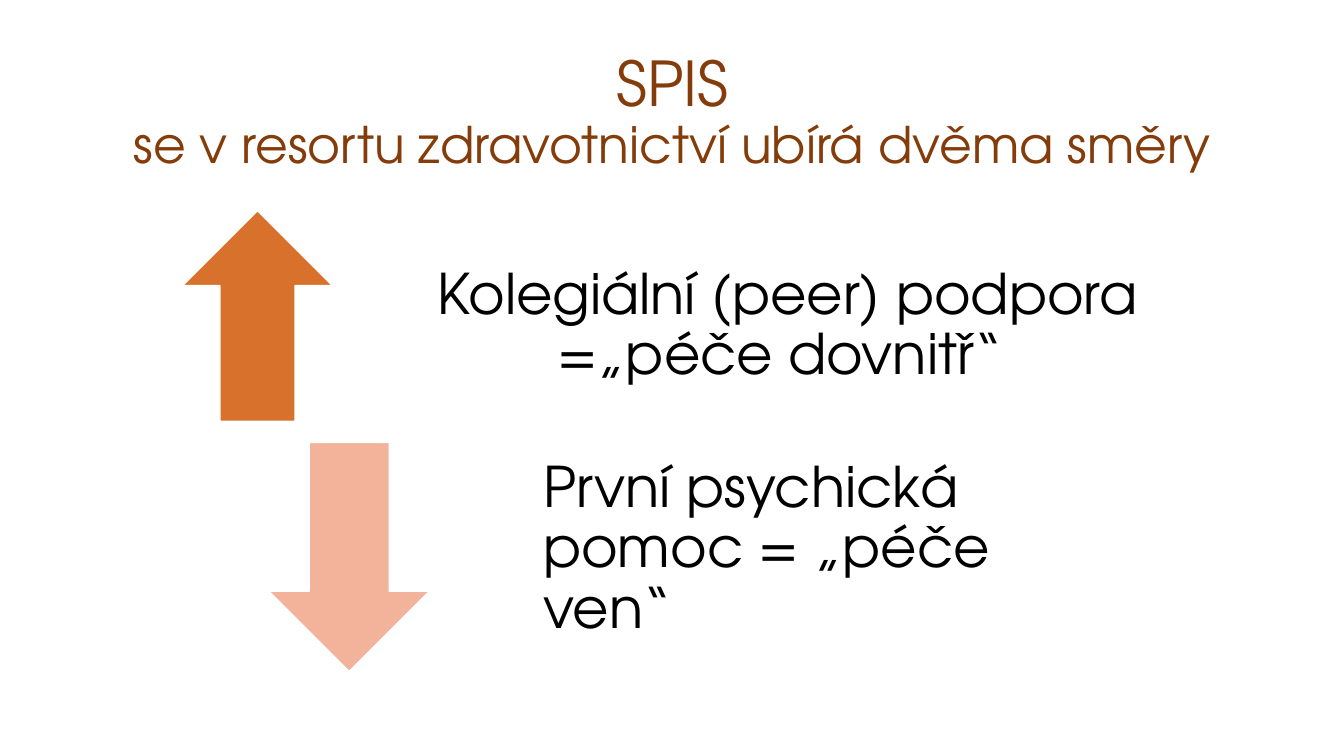
from pptx import Presentation
from pptx.dml.color import RGBColor
from pptx.enum.shapes import MSO_SHAPE as Shape
from pptx.enum.text import MSO_ANCHOR as Anchor, PP_ALIGN as Align
from pptx.util import Cm, Pt


def color(code):
    return RGBColor.from_string(code)


def add_text(place, lines, align, ink, inset):
    """Add a centred-height text box; lines holds (text, size) pairs."""
    box = slide.shapes.add_textbox(*map(Cm, place))
    frame = box.text_frame
    side, top, base = map(Cm, inset)
    form = {"word_wrap": True, "vertical_anchor": Anchor.MIDDLE,
            "margin_left": side, "margin_right": side,
            "margin_top": top, "margin_bottom": base}
    for key, value in form.items():
        setattr(frame, key, value)
    para = frame.paragraphs[0]
    para.alignment = align
    para.line_spacing = 0.9
    for i, (text, size) in enumerate(lines):
        if i:
            para.add_line_break()
        run = para.add_run()
        run.text = text
        for key, value in {"name": "TeX Gyre Adventor", "size": Pt(size)}.items():
            setattr(run.font, key, value)
        run.font.color.rgb = color(ink)


deck = Presentation()
deck.slide_width, deck.slide_height = Cm(33.87), Cm(19.05)
slide = deck.slides.add_slide(deck.slide_layouts[6])

title = [("SPIS", 44.1), ("se v resortu zdravotnictví ubírá dvěma směry", 36)]
add_text((2.34, 1.02, 29.21, 3.68), title, Align.CENTER, "843C0B",
         (0.25, 0.13, 0.13))

ways = [
    (Shape.UP_ARROW, (4.6, 5.31, 3.78, 5.31), "D7712C",
     "Kolegiální (peer) podpora =„péče dovnitř“ ",
     (10.21, 5.72, 19.28, 5.79), Align.CENTER),
    (Shape.DOWN_ARROW, (6.78, 11.15, 4.04, 5.77), "F3B39B",
     "První psychická pomoc = „péče ven“",
     (12.9, 11.35, 16.36, 5.79), Align.LEFT),
]
for kind, spot, tint, text, place, align in ways:
    arrow = slide.shapes.add_shape(kind, *map(Cm, spot))
    arrow.shadow.inherit = False
    arrow.fill.solid()
    arrow.fill.fore_color.rgb = color(tint)
    arrow.line.color.rgb = color("FFFFFF")
    arrow.line.width = Pt(1)
    add_text(place, [(text, 40)], align, "000000", (0.79, 0, 0.79))

deck.save("out.pptx")
